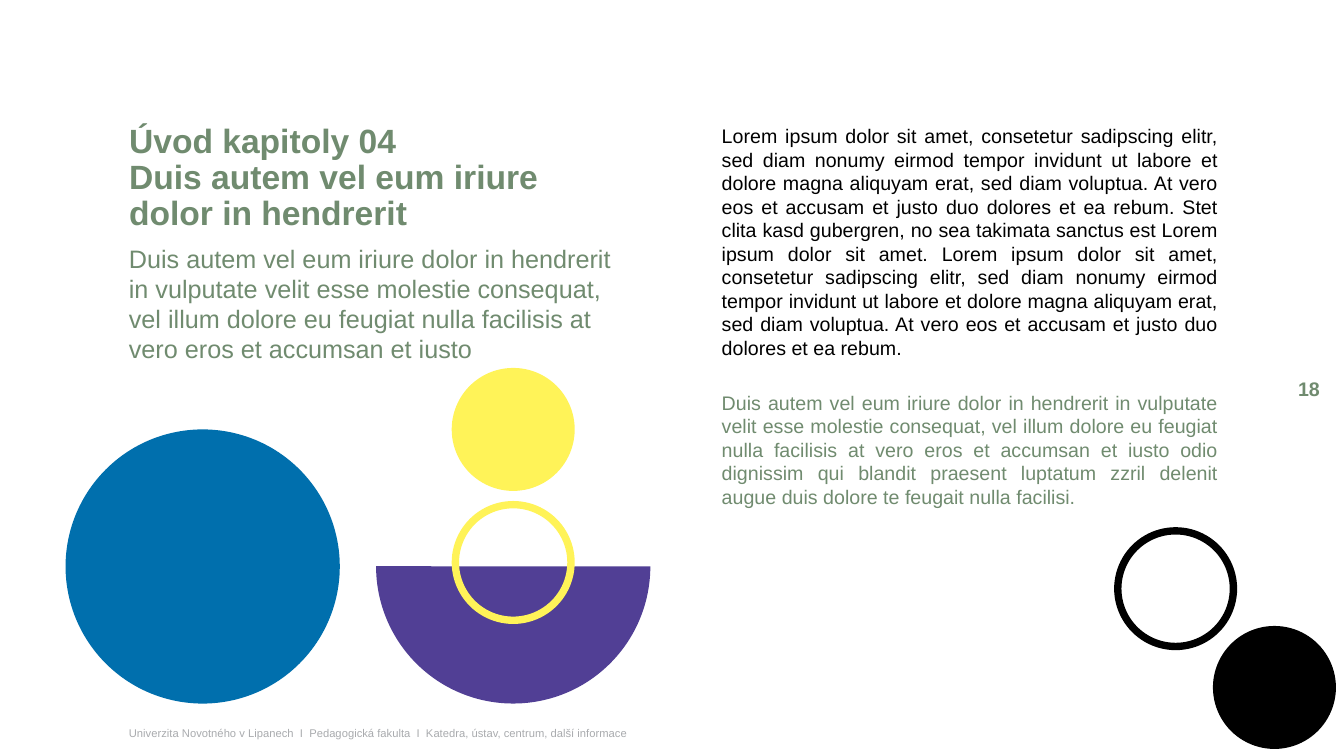
from dataclasses import dataclass

import pptx
import pptx.dml.color
import pptx.enum.shapes
import pptx.enum.text
import pptx.util
from pptx.util import Inches

SHAPE = pptx.enum.shapes.MSO_SHAPE
ALIGN = pptx.enum.text.PP_ALIGN
ANCHOR = pptx.enum.text.MSO_ANCHOR

GREEN, GREY, BLACK = "708B6F", "A9ABAE", "000000"
YELLOW, BLUE, PURPLE = "FFF358", "006FAD", "513F95"
LARGE, SMALL = 2.72, 1.22
LEFT_COLUMN, RIGHT_COLUMN, COLUMN_WIDTH = 1.18, 7.06, 5.12


@dataclass
class Disc:
    left: float
    top: float
    size: float
    color: str
    kind: int = SHAPE.OVAL
    adjustments: tuple[float, ...] = ()


def rgb(color: str) -> pptx.dml.color.RGBColor:
    return pptx.dml.color.RGBColor.from_string(color)


def draw_disc(slide, disc: Disc) -> None:
    figure = slide.shapes.add_shape(disc.kind, Inches(disc.left), Inches(disc.top),
                                    Inches(disc.size), Inches(disc.size))
    for index, value in enumerate(disc.adjustments):
        figure.adjustments[index] = value
    figure.shadow.inherit = False
    figure.fill.solid()
    figure.fill.fore_color.rgb = rgb(disc.color)
    figure.line.fill.background()


def place(holder, left: float, top: float, width: float, height: float,
          anchor=ANCHOR.TOP, wrap: bool = True):
    holder.left, holder.top = Inches(left), Inches(top)
    holder.width, holder.height = Inches(width), Inches(height)
    frame = holder.text_frame
    frame.word_wrap = wrap
    frame.auto_size = pptx.enum.text.MSO_AUTO_SIZE.NONE
    frame.vertical_anchor = anchor
    return frame


def add_frame(slide, left: float, top: float, width: float, height: float,
              anchor=ANCHOR.TOP, wrap: bool = True):
    holder = slide.shapes.add_textbox(0, 0, 0, 0)
    return place(holder, left, top, width, height, anchor, wrap)


def write(paragraph, text: str, *, size: float, color: str = GREEN, bold: bool = False,
          align=ALIGN.LEFT, before: float = 0, spacing: float = 1.0) -> None:
    paragraph.text = text
    paragraph.alignment = align
    paragraph.space_before = pptx.util.Pt(before)
    paragraph.line_spacing = spacing
    for run in paragraph.runs:
        run.font.name = "Arial"
        run.font.size = pptx.util.Pt(size)
        run.font.bold = bold
        run.font.color.rgb = rgb(color)


def main() -> None:
    deck = pptx.Presentation()
    deck.slide_width, deck.slide_height = Inches(13.33), Inches(7.5)
    slide = deck.slides.add_slide(deck.slide_layouts[5])

    # Circle compositions
    for disc in (
        Disc(3.73, 4.26, LARGE, PURPLE, SHAPE.PIE, (0, 108.09)),
        Disc(4.48, 3.65, SMALL, YELLOW),
        Disc(4.48, 4.97, SMALL, YELLOW, SHAPE.DONUT, (0.06,)),
        Disc(0.65, 4.26, LARGE, BLUE),
        Disc(12.03, 6.21, SMALL, BLACK),
        Disc(11.05, 5.23, SMALL, BLACK, SHAPE.DONUT, (0.06,)),
    ):
        draw_disc(slide, disc)

    # Chapter heading and lead
    heading = place(slide.shapes.title, LEFT_COLUMN, 1.18, COLUMN_WIDTH, 1.19)
    write(heading.paragraphs[0],
          "Úvod kapitoly 04\vDuis autem vel eum iriure dolor in hendrerit",
          size=24, bold=True, spacing=0.9)
    lead = add_frame(slide, LEFT_COLUMN, 2.36, COLUMN_WIDTH, 1.31)
    write(lead.paragraphs[0],
          "Duis autem vel eum iriure dolor in hendrerit in vulputate velit esse "
          "molestie consequat, vel illum dolore eu feugiat nulla facilisis at "
          "vero eros et accumsan et iusto", size=18, before=3)

    # Body column
    body = add_frame(slide, RIGHT_COLUMN, 1.18, COLUMN_WIDTH, 3.95)
    write(body.paragraphs[0],
          "Lorem ipsum dolor sit amet, consetetur sadipscing elitr, sed diam nonumy "
          "eirmod tempor invidunt ut labore et dolore magna aliquyam erat, sed diam "
          "voluptua. At vero eos et accusam et justo duo dolores et ea rebum. Stet "
          "clita kasd gubergren, no sea takimata sanctus est Lorem ipsum dolor sit "
          "amet. Lorem ipsum dolor sit amet, consetetur sadipscing elitr, sed diam "
          "nonumy eirmod tempor invidunt ut labore et dolore magna aliquyam erat, sed "
          "diam voluptua. At vero eos et accusam et justo duo dolores et ea rebum.",
          size=14, color=BLACK, align=ALIGN.JUSTIFY, before=3)
    write(body.add_paragraph(),
          "Duis autem vel eum iriure dolor in hendrerit in vulputate velit esse "
          "molestie consequat, vel illum dolore eu feugiat nulla facilisis at vero "
          "eros et accumsan et iusto odio dignissim qui blandit praesent luptatum "
          "zzril delenit augue duis dolore te feugait nulla facilisi.",
          size=14, align=ALIGN.JUSTIFY, before=22.5)

    # Footer and page number
    footer = add_frame(slide, LEFT_COLUMN, 7.15, 5.49, 0.24, ANCHOR.MIDDLE)
    write(footer.paragraphs[0],
          "Univerzita Novotného v Lipanech  I  Pedagogická fakulta  I  "
          "Katedra, ústav, centrum, další informace", size=8, color=GREY)
    page_number = add_frame(slide, 12.75, 3.69, 0.44, 0.34, ANCHOR.MIDDLE, wrap=False)
    write(page_number.paragraphs[0], "18", size=14, bold=True, align=ALIGN.RIGHT)

    deck.save("out.pptx")


if __name__ == "__main__":
    main()
